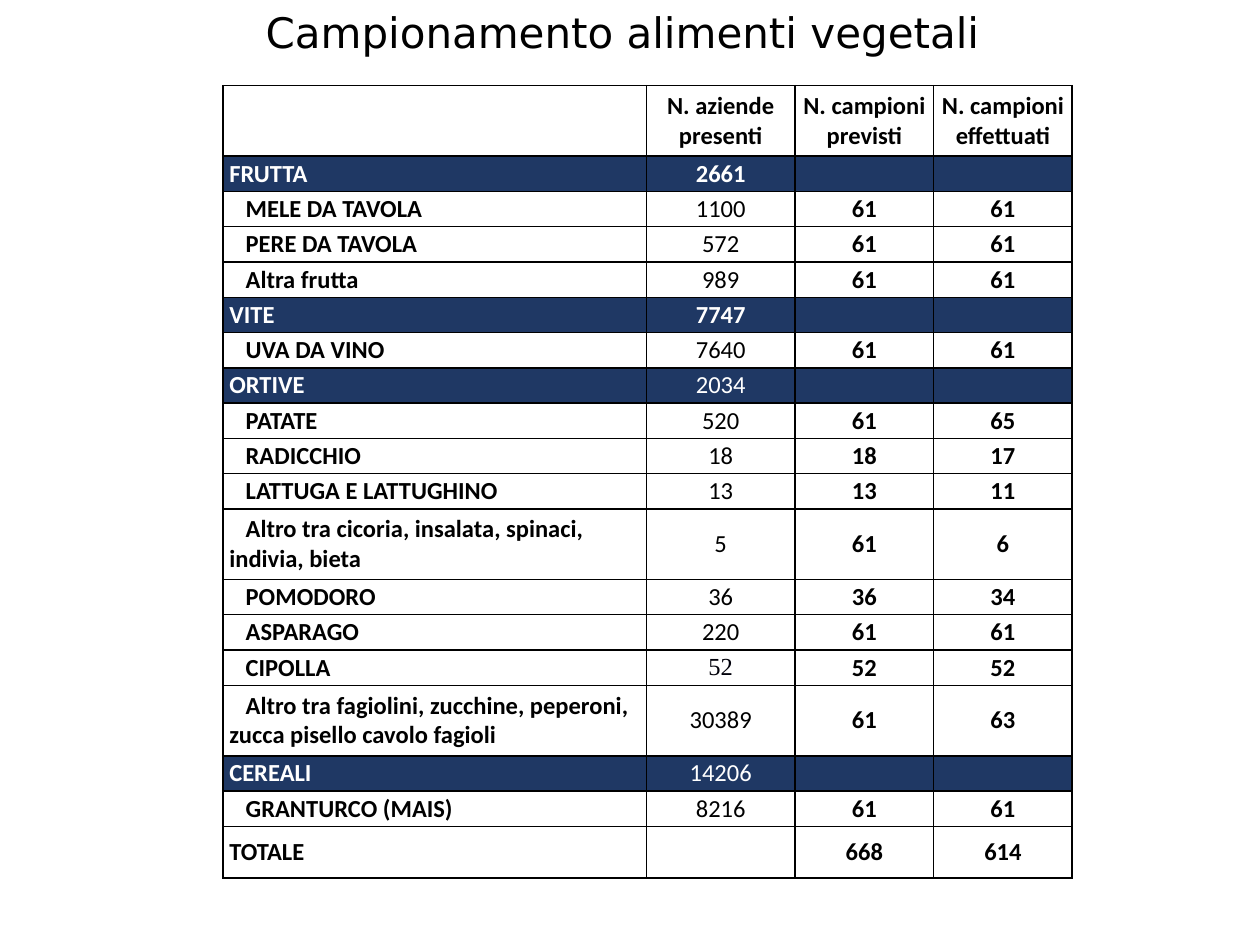
from dataclasses import dataclass

from lxml.etree import SubElement
from pptx import Presentation
from pptx.dml.color import RGBColor
from pptx.enum.text import MSO_ANCHOR, MSO_AUTO_SIZE, PP_ALIGN
from pptx.oxml.ns import qn
from pptx.util import Inches, Pt

BLACK, WHITE, NAVY = "000000", "FFFFFF", "1F3864"
SIZE = 14
WIDTHS = [3.36, 1.18, 1.1, 1.1]
LINE = 0.28


@dataclass
class Row:
    name: str
    farms: str
    plan: str = ""
    done: str = ""
    kind: str = "item"
    height: float = LINE
    bold: bool = False  # weight of the farm count
    font: str = "Calibri"  # font of the farm count
    ink: str = BLACK  # colour of the farm count


def group(name: str, farms: str, bold: bool = False) -> Row:
    return Row(name, farms, kind="group", bold=bold, ink=WHITE)


ROWS = [
    Row("", "N. aziende\npresenti", "N. campioni\nprevisti", "N. campioni\neffettuati",
        kind="head", height=2 * LINE, bold=True),
    group("FRUTTA", "2661", bold=True),
    Row("MELE DA TAVOLA", "1100", "61", "61"),
    Row("PERE DA TAVOLA", "572", "61", "61"),
    Row("Altra frutta", "989", "61", "61"),
    group("VITE", "7747", bold=True),
    Row("UVA DA VINO", "7640", "61", "61"),
    group("ORTIVE", "2034"),
    Row("PATATE", "520", "61", "65"),
    Row("RADICCHIO", "18", "18", "17"),
    Row("LATTUGA E LATTUGHINO", "13", "13", "11"),
    Row("Altro tra cicoria, insalata, spinaci, indivia, bieta", "5", "61", "6",
        height=2 * LINE),
    Row("POMODORO", "36", "36", "34"),
    Row("ASPARAGO", "220", "61", "61"),
    Row("CIPOLLA", "52", "52", "52", font="Times New Roman", ink="00000A"),
    Row("Altro tra fagiolini, zucchine, peperoni, zucca pisello cavolo fagioli",
        "30389", "61", "63", height=2 * LINE),
    group("CEREALI", "14206"),
    Row("GRANTURCO (MAIS)", "8216", "61", "61"),
    Row("TOTALE", "", "668", "614", kind="total", height=0.41),
]


def color(code: str) -> RGBColor:
    return RGBColor.from_string(code)


def style(run, size: float, face: str, ink: str, bold: bool = False) -> None:
    run.font.size = Pt(size)
    run.font.name = face
    run.font.bold = bold
    run.font.color.rgb = color(ink)


def border(cell) -> None:
    props = cell._tc.get_or_add_tcPr()
    for side in ("a:lnL", "a:lnR", "a:lnT", "a:lnB"):
        line = SubElement(props, qn(side), w=str(Pt(1)))
        fill = SubElement(line, qn("a:solidFill"))
        SubElement(fill, qn("a:srgbClr"), val=BLACK)


def write(cell, text: str, face: str, ink: str, bold: bool) -> None:
    cell.text_frame.text = text
    for para in cell.text_frame.paragraphs:
        for run in para.runs:
            style(run, SIZE, face, ink, bold)
        if not para.runs:  # keeps an empty cell from stretching its row
            SubElement(para._p, qn("a:endParaRPr"), sz=str(SIZE * 100))


def draw_cell(cell, row: Row, col: int) -> None:
    text = (row.name, row.farms, row.plan, row.done)[col]
    ink = WHITE if row.kind == "group" else BLACK
    if col == 1:
        write(cell, text, row.font, row.ink, row.bold)
    else:
        write(cell, text, "Calibri", ink, True)
    for para in cell.text_frame.paragraphs:
        if col:
            para.alignment = PP_ALIGN.CENTER
        elif row.kind == "item":
            para._p.get_or_add_pPr().set("indent", str(Inches(0.13)))
    cell.vertical_anchor = MSO_ANCHOR.MIDDLE
    cell.margin_left = cell.margin_right = Inches(0.05)
    cell.margin_top = cell.margin_bottom = 0
    border(cell)
    if row.kind == "group":
        cell.fill.solid()
        cell.fill.fore_color.rgb = color(NAVY)
    else:
        cell.fill.background()


def draw_table(slide) -> None:
    high = sum(row.height for row in ROWS)
    table = slide.shapes.add_table(
        len(ROWS), len(WIDTHS), Inches(1.77), Inches(0.68),
        Inches(sum(WIDTHS)), Inches(high)).table
    table.first_row = table.horz_banding = False
    for col, width in zip(table.columns, WIDTHS):
        col.width = Inches(width)
    for i, row in enumerate(ROWS):
        table.rows[i].height = Inches(row.height)
        for j in range(len(WIDTHS)):
            draw_cell(table.cell(i, j), row, j)


def draw_title(slide) -> None:
    box = slide.shapes.add_textbox(Inches(2.01), 0, Inches(6.89), Inches(0.5))
    frame = box.text_frame
    frame.word_wrap = True
    frame.auto_size = MSO_AUTO_SIZE.SHAPE_TO_FIT_TEXT
    frame.text = "Campionamento alimenti vegetali"
    style(frame.paragraphs[0].runs[0], 24, "DejaVu Sans", BLACK)


def main() -> None:
    deck = Presentation()
    deck.slide_width, deck.slide_height = Inches(10), Inches(7.5)
    slide = deck.slides.add_slide(deck.slide_layouts[6])
    draw_table(slide)
    draw_title(slide)
    deck.save("out.pptx")


if __name__ == "__main__":
    main()
